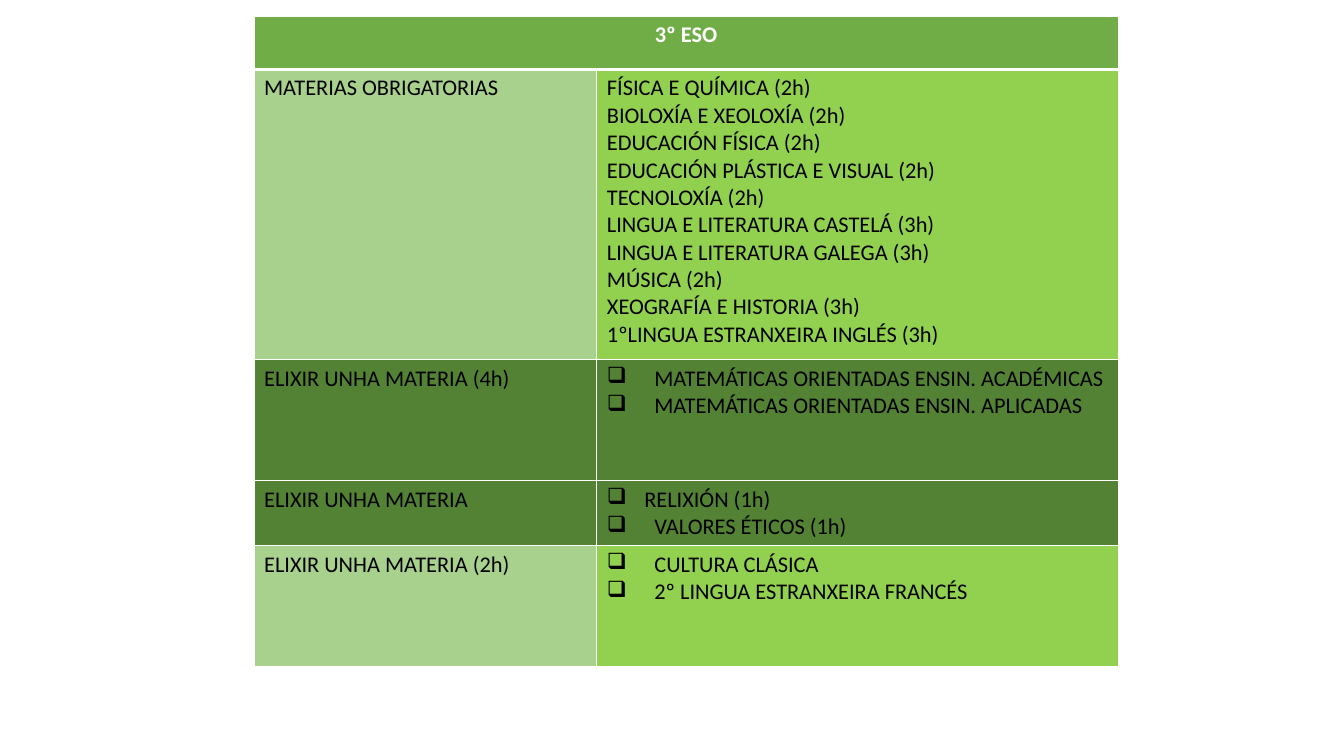
from dataclasses import dataclass

from lxml.etree import SubElement
from pptx import Presentation
from pptx.dml.color import RGBColor
from pptx.enum.text import PP_ALIGN
from pptx.oxml.ns import qn
from pptx.util import Inches, Pt


@dataclass(frozen=True)
class Theme:
    font: str = "Calibri"
    size: int = 16
    header: str = "70AD47"
    pale: str = "A9D18E"
    bright: str = "92D050"
    dark: str = "548235"
    ink: str = "000000"
    white: str = "FFFFFF"
    rule: int = 1
    header_rule: int = 3


THEME = Theme()
COURSE = "3º ESO"
COLUMN_WIDTHS = (3.4, 5.17)
HEADER_HEIGHT = 0.53
BULLET_INDENT = 0.47
NARROW_INDENT = 0.37

REQUIRED = (
    "FÍSICA E QUÍMICA (2h)",
    "BIOLOXÍA E XEOLOXÍA (2h)",
    "EDUCACIÓN FÍSICA (2h)",
    "EDUCACIÓN PLÁSTICA E VISUAL (2h)",
    "TECNOLOXÍA (2h)",
    "LINGUA E LITERATURA CASTELÁ (3h)",
    "LINGUA E LITERATURA GALEGA (3h)",
    "MÚSICA (2h)",
    "XEOGRAFÍA E HISTORIA (3h)",
    "1ºLINGUA ESTRANXEIRA INGLÉS (3h)",
)
MATHS = (
    "MATEMÁTICAS ORIENTADAS ENSIN. ACADÉMICAS",
    "MATEMÁTICAS ORIENTADAS ENSIN. APLICADAS",
)
VALUES = ("RELIXIÓN (1h)", "VALORES ÉTICOS (1h)")
OPTIONS = ("CULTURA CLÁSICA", "2º LINGUA ESTRANXEIRA FRANCÉS")

WIDE = (BULLET_INDENT, BULLET_INDENT)
SUBJECT_GROUPS = (
    ("MATERIAS OBRIGATORIAS", REQUIRED, (), 2.88, THEME.pale, THEME.bright),
    ("ELIXIR UNHA MATERIA (4h)", MATHS, WIDE, 1.2, THEME.dark, THEME.dark),
    ("ELIXIR UNHA MATERIA", VALUES, (NARROW_INDENT, BULLET_INDENT), 0.64,
     THEME.dark, THEME.dark),
    ("ELIXIR UNHA MATERIA (2h)", OPTIONS, WIDE, 1.2, THEME.pale, THEME.bright),
)


def set_borders(cell, top, bottom):
    properties = cell._tc.get_or_add_tcPr()
    widths = {"L": THEME.rule, "R": THEME.rule, "T": top, "B": bottom}
    for side, width in widths.items():
        border = SubElement(properties, qn(f"a:ln{side}"), w=str(Pt(width)))
        fill = SubElement(border, qn("a:solidFill"))
        SubElement(fill, qn("a:srgbClr"), val=THEME.white)


def add_checkbox(paragraph, indent):
    properties = paragraph._p.get_or_add_pPr()
    properties.set("marL", str(Inches(indent)))
    properties.set("indent", str(-Inches(indent)))
    SubElement(properties, qn("a:buChar"), char="❑")


def fill_cell(cell, lines, background, ink=THEME.ink, bold=False, indents=(),
              top=THEME.rule, bottom=THEME.rule):
    set_borders(cell, top, bottom)
    cell.fill.solid()
    cell.fill.fore_color.rgb = RGBColor.from_string(background)
    cell.text_frame.text = "\n".join(lines)
    paragraphs = cell.text_frame.paragraphs
    for paragraph, indent in zip(paragraphs, indents):
        add_checkbox(paragraph, indent)
    for paragraph in paragraphs:
        for run in paragraph.runs:
            run.font.name = THEME.font
            run.font.size = Pt(THEME.size)
            run.font.bold = bold
            run.font.color.rgb = RGBColor.from_string(ink)


def add_course_table(slide, left, top):
    heights = [HEADER_HEIGHT] + [group[3] for group in SUBJECT_GROUPS]
    table = slide.shapes.add_table(
        len(heights), len(COLUMN_WIDTHS), Inches(left), Inches(top),
        Inches(sum(COLUMN_WIDTHS)), Inches(sum(heights))).table
    table.horz_banding = False
    for column, width in zip(table.columns, COLUMN_WIDTHS):
        column.width = Inches(width)
    for row, height in zip(table.rows, heights):
        row.height = Inches(height)

    course = table.cell(0, 0)
    course.merge(table.cell(0, 1))
    fill_cell(course, [COURSE], THEME.header, THEME.white, True,
              bottom=THEME.header_rule)
    course.text_frame.paragraphs[0].alignment = PP_ALIGN.CENTER
    set_borders(table.cell(0, 1), THEME.rule, THEME.header_rule)

    for index, group in enumerate(SUBJECT_GROUPS, start=1):
        heading, subjects, indents, _, heading_fill, subject_fill = group
        rule = THEME.header_rule if index == 1 else THEME.rule
        fill_cell(table.cell(index, 0), [heading], heading_fill, top=rule)
        fill_cell(table.cell(index, 1), subjects, subject_fill,
                  indents=indents, top=rule)


def main():
    presentation = Presentation()
    presentation.slide_width = Inches(13.33)
    presentation.slide_height = Inches(7.5)
    slide = presentation.slides.add_slide(presentation.slide_layouts[6])
    add_course_table(slide, 2.52, 0.16)
    presentation.save("out.pptx")


if __name__ == "__main__":
    main()
